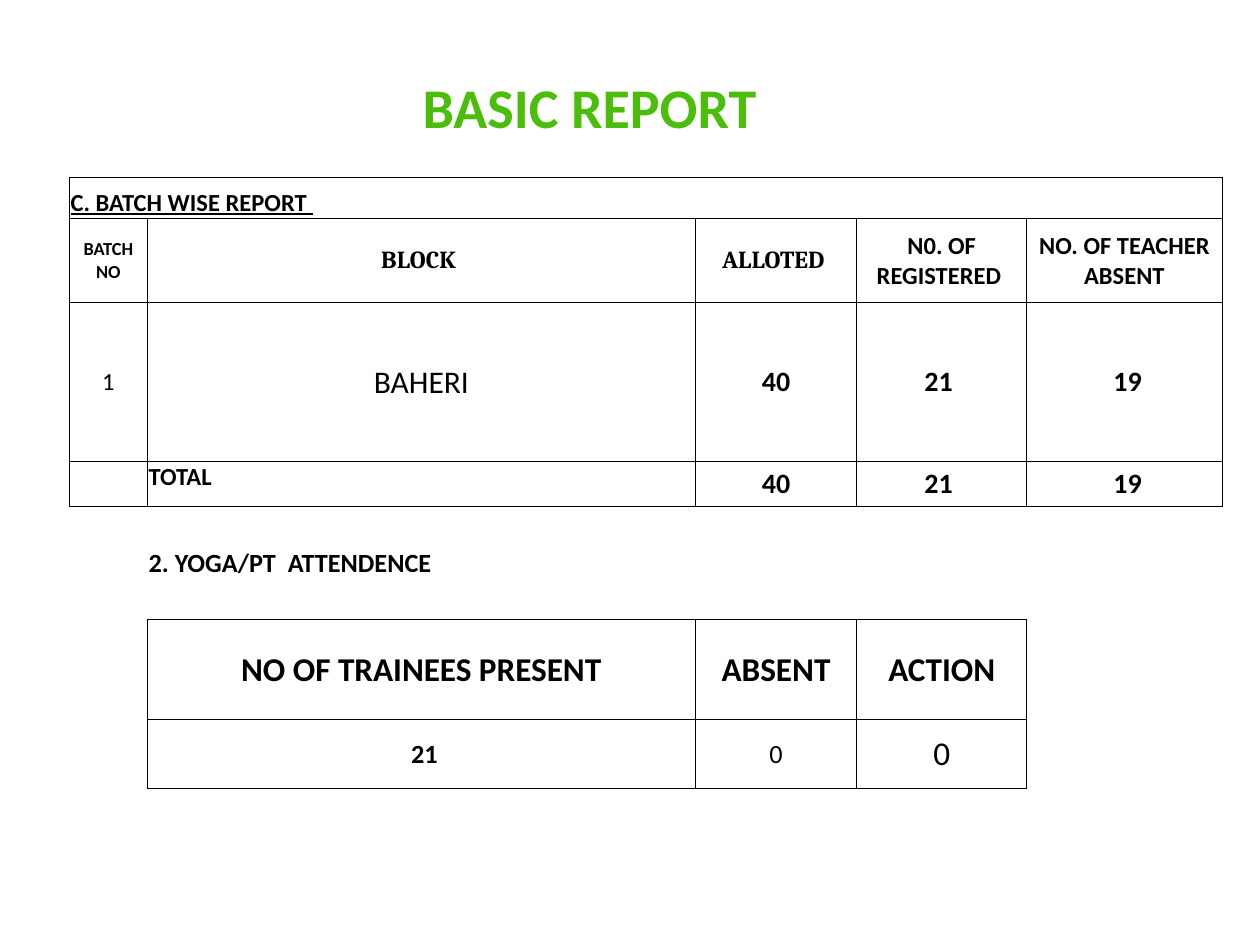
from lxml.etree import SubElement
from pptx import Presentation
from pptx.dml.color import RGBColor
from pptx.enum.text import MSO_ANCHOR as Anchor, PP_ALIGN as Align
from pptx.oxml.ns import qn
from pptx.util import Inches, Pt

BLACK, WHITE, GREEN = "000000", "FFFFFF", "4ABE0A"
COLUMNS = [0.62, 4.35, 1.28, 1.35, 1.55]
ROWS = [0.32, 0.67, 1.26, 0.36, 0.23, 0.44, 0.23, 0.79, 0.55, 0.23]
MERGES = [((0, 0), (0, 4)), ((5, 1), (5, 3))]
BORDERED = {(r, c) for r in range(4) for c in range(5)}
BORDERED |= {(r, c) for r in (7, 8) for c in (1, 2, 3)}

# (row, first column): texts running to the right
CONTENT = {
    (0, 0): ["C. BATCH WISE REPORT "],
    (1, 0): ["BATCH NO", "BLOCK ", "ALLOTED ", "N0. OF REGISTERED ", "NO. OF TEACHER ABSENT"],
    (2, 0): ["1", "BAHERI", "40", "21 ", " 19"],
    (3, 1): ["TOTAL", "40", "21 ", " 19"],
    (5, 1): ["2. YOGA/PT  ATTENDENCE"],
    (7, 1): ["NO OF TRAINEES PRESENT", "ABSENT", "ACTION"],
    (8, 1): [" 21", "0", "0"],
}
ROW_SIZES = {0: 14, 1: 14, 2: 16, 3: 16, 5: 15, 7: 19, 8: 15}
SPECIAL = {
    (0, 0): {"underline": True},
    (1, 0): {"size": 10.5},
    (1, 1): {"name": "Cambria"},
    (1, 2): {"name": "Cambria"},
    (2, 0): {"size": 14, "bold": False},
    (2, 1): {"size": 18, "bold": False},
    (3, 1): {"size": 14},
    (8, 2): {"bold": False},
    (8, 3): {"size": 19, "bold": False},
}
ANCHORS = {(0, 0): Anchor.BOTTOM, (3, 1): Anchor.TOP}
LEFT_ALIGNED = {(0, 0), (3, 1), (5, 1)}


def rgb(value):
    return RGBColor.from_string(value)


def write(para, text, align, color=BLACK, **style):
    para.alignment = align
    span = para.add_run()
    span.text = text
    span.font.color.rgb = rgb(color)
    style = {"name": "Calibri", "bold": True, **style}
    style["size"] = Pt(style["size"])
    for name, value in style.items():
        setattr(span.font, name, value)


def add_borders(cell):
    properties = cell._tc.get_or_add_tcPr()
    for side in "LRTB":
        line = SubElement(properties, qn(f"a:ln{side}"), w=str(Pt(0.5)))
        fill = SubElement(line, qn("a:solidFill"))
        SubElement(fill, qn("a:srgbClr"), val=BLACK)


def format_cell(cell, place):
    cell.margin_left = cell.margin_right = cell.margin_top = Inches(0.01)
    cell.margin_bottom = 0
    cell.vertical_anchor = ANCHORS.get(place, Anchor.MIDDLE)
    if place in BORDERED:
        add_borders(cell)
        cell.fill.solid()
        cell.fill.fore_color.rgb = rgb(WHITE)
    else:
        cell.fill.background()


deck = Presentation()
deck.slide_width, deck.slide_height = Inches(10), Inches(7.5)
page = deck.slides.add_slide(deck.slide_layouts[6])

title = page.shapes.add_textbox(Inches(0.43), Inches(0.52), Inches(8.5), Inches(0.65))
title.text_frame.word_wrap = True
title.text_frame.vertical_anchor = Anchor.MIDDLE
write(title.text_frame.paragraphs[0], "BASIC REPORT", Align.CENTER, GREEN, size=32)

frame = page.shapes.add_table(len(ROWS), len(COLUMNS), Inches(0.55), Inches(1.41),
                              Inches(sum(COLUMNS)), Inches(sum(ROWS)))
table = frame.table
table.first_row = table.horz_banding = False
# "No Style, No Grid"
table._tbl.tblPr.find(qn("a:tableStyleId")).text = "{2D5ABB26-0587-4C30-8999-92F81FD0307C}"
for column, width in zip(table.columns, COLUMNS):
    column.width = Inches(width)
for row, height in zip(table.rows, ROWS):
    row.height = Inches(height)

texts = {(row, first + i): text
         for (row, first), line in CONTENT.items() for i, text in enumerate(line)}
for row in range(len(ROWS)):
    for column in range(len(COLUMNS)):
        place = (row, column)
        cell = table.cell(row, column)
        format_cell(cell, place)
        para = cell.text_frame.paragraphs[0]
        if place in texts:
            align = Align.LEFT if place in LEFT_ALIGNED else Align.CENTER
            write(para, texts[place], align,
                  **{"size": ROW_SIZES[row], **SPECIAL.get(place, {})})
        else:  # small type keeps empty rows at their height
            SubElement(para._p, qn("a:endParaRPr"), sz="800")
for start, end in MERGES:
    table.cell(*start).merge(table.cell(*end))

deck.save("out.pptx")
